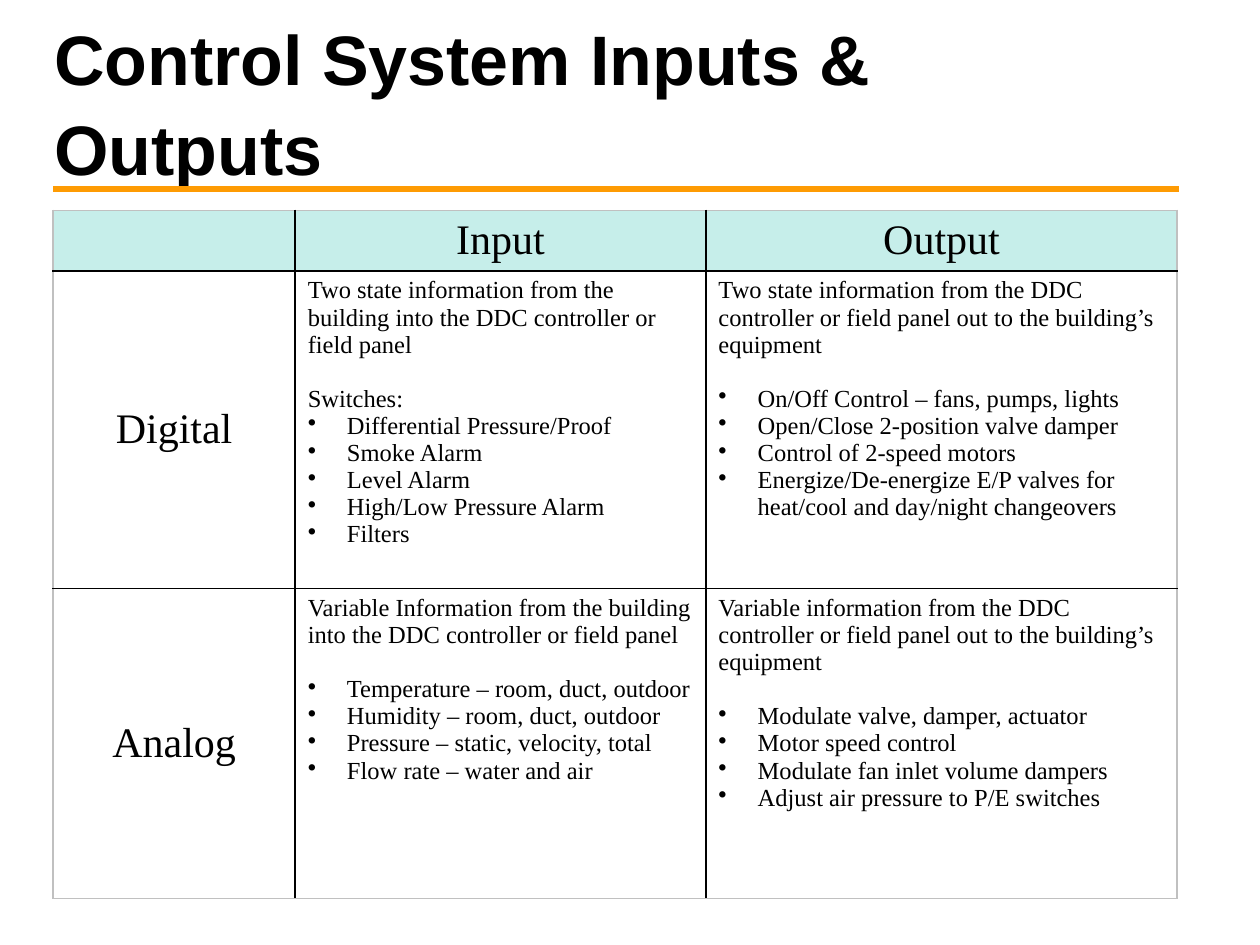
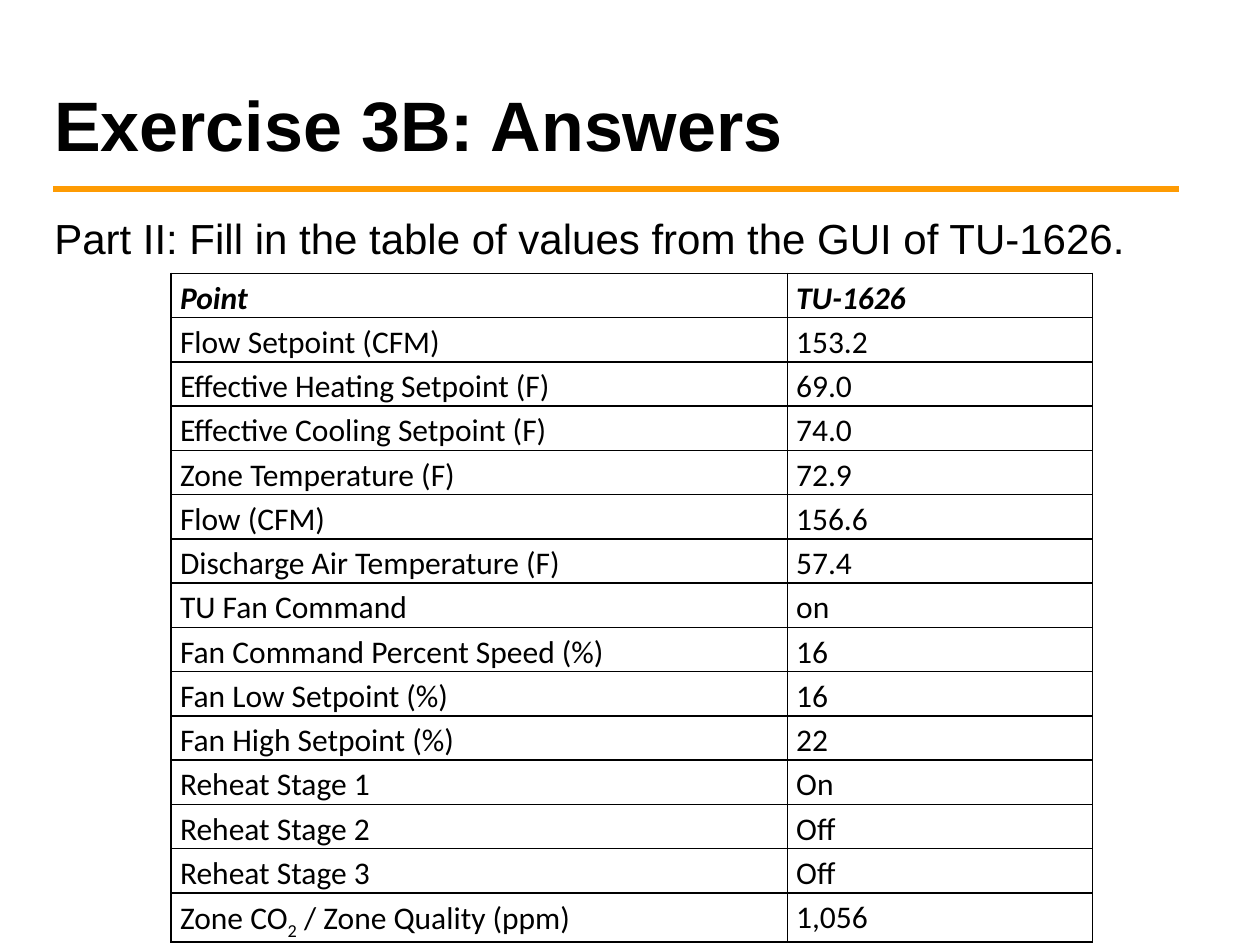
from lxml import etree
from pptx import Presentation
from pptx.dml.color import RGBColor
from pptx.enum.shapes import MSO_CONNECTOR
from pptx.enum.text import MSO_ANCHOR, MSO_AUTO_SIZE, PP_ALIGN
from pptx.oxml.ns import qn
from pptx.util import Cm, Pt

LEFT, CENTER = PP_ALIGN.LEFT, PP_ALIGN.CENTER
TOP, MIDDLE = MSO_ANCHOR.TOP, MSO_ANCHOR.MIDDLE
STRAIGHT = MSO_CONNECTOR.STRAIGHT
NO_AUTOFIT = MSO_AUTO_SIZE.NONE

COLORS = {"text": "000000", "rule": "FE9B03", "header": "C6EEEA",
          "grid": "000000", "frame": "C0C0C0"}
TITLE_FORMAT = {"font": "Arial", "size": 40, "bold": True, "spacing": 1.07}
HEADING_FORMAT = {"font": "Times New Roman", "size": 24, "align": CENTER}
DETAIL_FORMAT = {"font": "Times New Roman", "size": 14}
POINT_FORMAT = {"font": "Calibri", "size": 18, "spacing": 1.15, "after": 6}


def write(frame, text, font, size, bold=False, italic=False, align=LEFT,
          spacing=1.0, after=0, bullet=None):
    """Add one paragraph; text between two bars becomes a subscript."""
    paragraph = frame.paragraphs[0]
    if paragraph.runs:
        paragraph = frame.add_paragraph()
    properties = paragraph._p.get_or_add_pPr()
    indent = Cm(0.79) if bullet else 0
    properties.set("marL", str(indent))
    properties.set("indent", str(-indent))
    if bullet:
        etree.SubElement(properties, qn("a:buChar")).set("char", bullet)
    else:
        etree.SubElement(properties, qn("a:buNone"))
    paragraph.alignment = align
    paragraph.line_spacing = spacing
    paragraph.space_before = Pt(0)
    paragraph.space_after = Pt(after)
    for position, part in enumerate(text.split("|")):
        run = paragraph.add_run()
        run.text = part
        run.font.name = font
        run.font.size = Pt(size)
        run.font.bold = bold
        run.font.italic = italic
        run.font.color.rgb = RGBColor.from_string(COLORS["text"])
        if position % 2:
            run._r.get_or_add_rPr().set("baseline", "-25000")


def add_grid(slide, left, top, widths, heights, frame_color):
    """Add an unfilled table with 1 pt borders and a coloured outer frame."""
    rows, columns = len(heights), len(widths)
    grid = slide.shapes.add_table(rows, columns, Cm(left), Cm(top),
                                  Cm(sum(widths)), Cm(sum(heights))).table
    grid.first_row = grid.horz_banding = False
    for column, width in zip(grid.columns, widths):
        column.width = Cm(width)
    for row, height in zip(grid.rows, heights):
        row.height = Cm(height)
    for r in range(rows):
        for c in range(columns):
            cell = grid.cell(r, c)
            outer_sides = {"lnL": c == 0, "lnR": c == columns - 1,
                           "lnT": r == 0, "lnB": r == rows - 1}
            for side, is_outer in outer_sides.items():
                border = etree.SubElement(cell._tc.get_or_add_tcPr(), qn(f"a:{side}"))
                border.set("w", str(Pt(1)))
                paint = etree.SubElement(border, qn("a:solidFill"))
                etree.SubElement(paint, qn("a:srgbClr")).set(
                    "val", frame_color if is_outer else COLORS["grid"])
            cell.fill.background()
    return grid


prs = Presentation()
prs.slide_width, prs.slide_height = Cm(25.4), Cm(19.05)
title_only, title_and_body = prs.slide_layouts[5], prs.slide_layouts[1]

# Titles and the rule below them
slides = []
for layout, title_text, title_box in [
    (title_only, "Control System Inputs & Outputs", (0.84, 0.64, 18.42, 2.74)),
    (title_and_body, "Exercise 3B: Answers", (0.84, 1.45, 15.37, 1.96)),
]:
    slide = prs.slides.add_slide(layout)
    slides.append(slide)
    title = slide.shapes.title
    title.left, title.top, title.width, title.height = map(Cm, title_box)
    title.text_frame.auto_size = NO_AUTOFIT
    title.text_frame.vertical_anchor = MIDDLE
    write(title.text_frame, title_text, **TITLE_FORMAT)
    rule = slide.shapes.add_connector(STRAIGHT, Cm(1.07), Cm(3.81), Cm(23.77), Cm(3.81))
    rule.line.color.rgb = RGBColor.from_string(COLORS["rule"])
    rule.line.width = Pt(4)
    etree.SubElement(rule._element.spPr, qn("a:effectLst"))
inputs_outputs, answers = slides

# Slide 1: kinds of signal by direction
signals = [
    ("Digital", [
        ("Two state information from the building into the DDC controller or field panel",
         "Switches:",
         ["Differential Pressure/Proof", "Smoke Alarm", "Level Alarm",
          "High/Low Pressure Alarm", "Filters"]),
        ("Two state information from the DDC controller or field panel out to "
         "the building’s equipment",
         None,
         ["On/Off Control – fans, pumps, lights", "Open/Close 2-position valve damper",
          "Control of 2-speed motors",
          "Energize/De-energize E/P valves for heat/cool and day/night changeovers"]),
    ]),
    ("Analog", [
        ("Variable Information from the building into the DDC controller or field panel",
         None,
         ["Temperature – room, duct, outdoor", "Humidity – room, duct, outdoor",
          "Pressure – static, velocity, total", "Flow rate – water and air"]),
        ("Variable information from the DDC controller or field panel out to "
         "the building’s equipment",
         None,
         ["Modulate valve, damper, actuator", "Motor speed control",
          "Modulate fan inlet volume dampers", "Adjust air pressure to P/E switches"]),
    ]),
]
signal_grid = add_grid(inputs_outputs, 1.07, 4.24, [4.88, 8.28, 9.5],
                       [1.22, 6.4, 6.25], COLORS["frame"])
for c, direction in enumerate(["", "Input", "Output"]):
    cell = signal_grid.cell(0, c)
    cell.fill.solid()
    cell.fill.fore_color.rgb = RGBColor.from_string(COLORS["header"])
    cell.vertical_anchor = MIDDLE
    if direction:
        write(cell.text_frame, direction, **HEADING_FORMAT)
for r, (kind, directions) in enumerate(signals, start=1):
    kind_cell = signal_grid.cell(r, 0)
    kind_cell.vertical_anchor = MIDDLE
    write(kind_cell.text_frame, kind, **HEADING_FORMAT)
    for c, (definition, group, examples) in enumerate(directions, start=1):
        details = signal_grid.cell(r, c).text_frame
        write(details, definition, after=15.5, **DETAIL_FORMAT)
        if group:
            write(details, group, **DETAIL_FORMAT)
        for example in examples:
            write(details, example, bullet="•", **DETAIL_FORMAT)

# Slide 2: point values
task = answers.placeholders[1]
task.left, task.top, task.width, task.height = map(Cm, (0.84, 4.01, 23.52, 1.63))
task.text_frame.auto_size = NO_AUTOFIT
task.text_frame.vertical_anchor = TOP
task.text_frame.margin_top = Cm(0.28)
write(task.text_frame, "Part II: Fill in the table of values from the GUI of TU-1626.",
      font="Arial", size=24)

points = [
    ("Point", "TU-1626"),
    ("Flow Setpoint (CFM)", "153.2"),
    ("Effective Heating Setpoint (F)", "69.0"),
    ("Effective Cooling Setpoint (F)", "74.0"),
    ("Zone Temperature (F)", "72.9"),
    ("Flow (CFM)", "156.6"),
    ("Discharge Air Temperature (F)", "57.4"),
    ("TU Fan Command", "on"),
    ("Fan Command Percent Speed (%)", "16"),
    ("Fan Low Setpoint (%)", "16"),
    ("Fan High Setpoint (%)", "22"),
    ("Reheat Stage 1", "On"),
    ("Reheat Stage 2", "Off"),
    ("Reheat Stage 3", "Off"),
    ("Zone CO|2| / Zone Quality (ppm)", "1,056"),
]
point_grid = add_grid(answers, 3.45, 5.51, [12.42, 6.15],
                      [0.82] * len(points), COLORS["grid"])
for r, point in enumerate(points):
    for c, entry in enumerate(point):
        cell = point_grid.cell(r, c)
        cell.margin_left = cell.margin_right = Cm(0.18)
        cell.margin_top = cell.margin_bottom = 0
        write(cell.text_frame, entry, bold=r == 0, italic=r == 0, **POINT_FORMAT)

prs.save("out.pptx")
